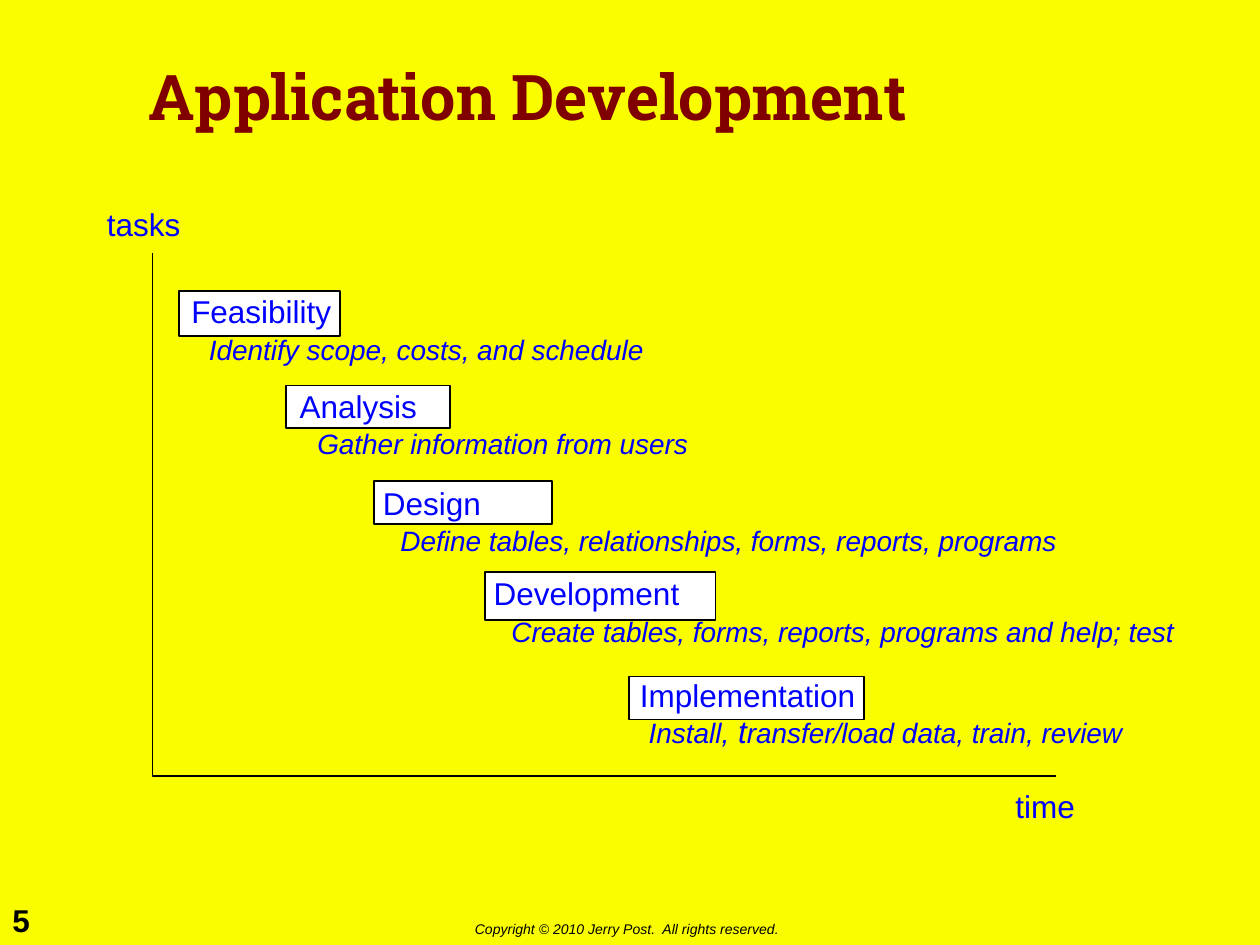
import pptx
import pptx.util
import pptx.dml.color
import pptx.enum.shapes
import pptx.enum.text

Inches = pptx.util.Inches
Pt = pptx.util.Pt
RGB = pptx.dml.color.RGBColor

YELLOW = RGB(0xFA, 0xFD, 0x00)
MAROON = RGB(0x80, 0x00, 0x00)
BLUE = RGB(0x00, 0x00, 0xFF)
BLACK = RGB(0x00, 0x00, 0x00)
WHITE = RGB(0xFF, 0xFF, 0xFF)

STAGES = [
    ("Feasibility", [("Identify scope, costs, and schedule", 16)],
     (1.42, 2.27, 3.8, 0.7), 0.14, (0, 0.04), (1.28, 0.36)),
    ("Analysis", [("Gather information from users", 16)],
     (2.28, 3.02, 3.3, 0.7), 0.14, (-0.01, 0.04), (1.3, 0.34)),
    ("Design", [("Define tables, relationships, forms, reports, programs", 16)],
     (2.94, 3.79, 5.57, 0.7), 0.14, (0.03, 0.03), (1.41, 0.34)),
    ("Development", [("Create tables, forms, reports, programs and help; test", 16)],
     (3.82, 4.51, 5.62, 0.7), 0.14, (0.03, 0.03), (1.83, 0.38)),
    ("Implementation",
     [("Install,", 16), (" t", 18), ("ransfer/load data, train, review", 16)],
     (4.98, 5.32, 4.04, 0.7), 0.07, (0.01, 0.05), (1.87, 0.34)),
]


def style(run, size, color, face="Arial", bold=False, italic=False):
    """Set the font of one run."""
    font = run.font
    font.name, font.size = face, Pt(size)
    font.bold, font.italic = bold, italic
    font.color.rgb = color


def label(slide, box, text, size, color, wrap=False, **look):
    """Place a one-line text box and return its frame."""
    frame = slide.shapes.add_textbox(*map(Inches, box)).text_frame
    frame.word_wrap = wrap
    if not wrap:
        frame.auto_size = pptx.enum.text.MSO_AUTO_SIZE.SHAPE_TO_FIT_TEXT
    frame.text = text
    style(frame.paragraphs[0].runs[0], size, color, **look)
    return frame


def title(slide, box):
    """Place the slide title, centred vertically in its box."""
    frame = label(slide, box, "Application Development", 36, MAROON,
                  wrap=True, face="Roboto Slab", bold=True)
    frame.vertical_anchor = pptx.enum.text.MSO_ANCHOR.MIDDLE
    frame.paragraphs[0].line_spacing = 0.9


def footer(slide, box):
    """Place the page number and the copyright line."""
    left, top, _, high = box
    label(slide, (left, top, 0.5, high), "5", 18, BLACK, bold=True)
    label(slide, (left + 3.67, top + 0.16, 2.65, 0.24),
          "Copyright © 2010 Jerry Post.  All rights reserved.",
          8, BLACK, italic=True)


def axes(slide, box):
    """Draw the L-shaped axes in the box and name them."""
    left, top, wide, high = box
    right, base = left + wide, top + high
    build = slide.shapes.build_freeform(Inches(left), Inches(top))
    build.add_line_segments(
        [(Inches(left), Inches(base)), (Inches(right), Inches(base))], close=False)
    line = build.convert_to_shape()
    line.shadow.inherit = False
    line.fill.background()
    line.line.color.rgb = BLACK
    line.line.width = Pt(1)
    label(slide, (left - 0.46, top - 0.43, 0.8, 0.4), "tasks", 18, BLUE)
    label(slide, (right - 0.42, base + 0.04, 0.68, 0.4), "time", 18, BLUE)


def stage(slide, name, detail, box, indent, shift, size):
    """Place one stage: its bar, its name and its detail line."""
    left, top = box[0] + shift[0], box[1] + shift[1]
    bar = slide.shapes.add_shape(pptx.enum.shapes.MSO_SHAPE.RECTANGLE,
                                 *map(Inches, (left, top, *size)))
    bar.shadow.inherit = False
    bar.fill.solid()
    bar.fill.fore_color.rgb = WHITE
    bar.line.color.rgb = BLACK
    bar.line.width = Pt(1)
    para = label(slide, box, name, 18, BLUE).add_paragraph()
    para._p.get_or_add_pPr().set("marL", str(Inches(indent)))
    para.line_spacing = Pt(20.5)
    for text, points in detail:
        run = para.add_run()
        run.text = text
        style(run, points, BLUE, italic=True)


def main():
    """Build the slide and save it."""
    deck = pptx.Presentation()
    deck.slide_width, deck.slide_height = Inches(10), Inches(7.5)
    slide = deck.slides.add_slide(deck.slide_layouts[6])
    slide.background.fill.solid()
    slide.background.fill.fore_color.rgb = YELLOW
    footer(slide, (0, 7.1, 10, 0.4))
    title(slide, (1.08, 0.17, 7.83, 1.25))
    axes(slide, (1.21, 2.01, 7.17, 4.15))
    for item in STAGES:
        stage(slide, *item)
    deck.save("out.pptx")


if __name__ == "__main__":
    main()
